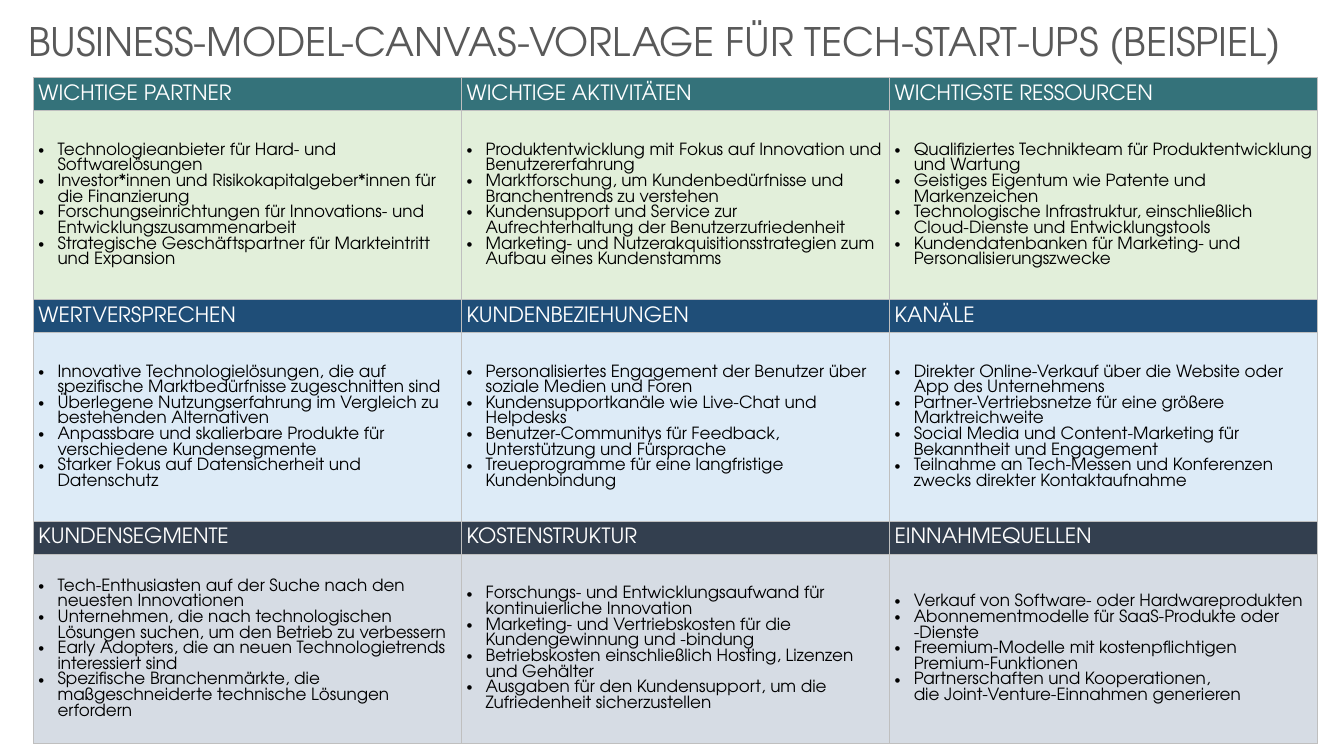
from pptx import Presentation
from pptx.dml.color import RGBColor
from pptx.enum.text import MSO_ANCHOR, MSO_AUTO_SIZE, PP_ALIGN
from pptx.oxml.ns import qn
from pptx.util import Cm, Pt
from lxml import etree

TOP, MIDDLE = MSO_ANCHOR.TOP, MSO_ANCHOR.MIDDLE
FIT_SHAPE = MSO_AUTO_SIZE.SHAPE_TO_FIT_TEXT
LEFT = PP_ALIGN.LEFT

FONT = "TeX Gyre Adventor"
COLORS = {
    "title": "595959", "white": "FFFFFF", "black": "000000", "border": "BFBFBF",
    "teal": "34727A", "green": "E2EFDA",
    "blue": "1F4E78", "sky": "DDEBF7",
    "slate": "333F4F", "gray": "D6DCE4",
}
TITLE = {"size": Pt(28), "color": "title"}
HEADING = {"size": Pt(15), "color": "white"}
BULLET = {"size": Pt(12), "color": "black"}

COLUMNS = 3
COLUMN_WIDTH = Cm(10.79)
HEADING_HEIGHT, BODY_HEIGHT = Cm(0.84), Cm(4.75)
BULLET_INDENT = Cm(0.48)
CELL_FORMAT = {
    "vertical_anchor": MIDDLE, "margin_left": Cm(0.13), "margin_top": Cm(0.02),
    "margin_right": Cm(0.02), "margin_bottom": 0,
}

# Each band: heading fill, body fill, then its sections
BANDS = [
    ("teal", "green", {
        "WICHTIGE PARTNER": [
            "Technologieanbieter für Hard- und Softwarelösungen",
            "Investor*innen und Risikokapitalgeber*innen für die Finanzierung",
            "Forschungseinrichtungen für Innovations- und Entwicklungszusammenarbeit",
            "Strategische Geschäftspartner für Markteintritt und Expansion"],
        "WICHTIGE AKTIVITÄTEN": [
            "Produktentwicklung mit Fokus auf Innovation und Benutzererfahrung",
            "Marktforschung, um Kundenbedürfnisse und Branchentrends zu verstehen",
            "Kundensupport und Service zur Aufrechterhaltung der Benutzerzufriedenheit",
            "Marketing- und Nutzerakquisitionsstrategien zum Aufbau eines Kundenstamms"],
        "WICHTIGSTE RESSOURCEN": [
            "Qualifiziertes Technikteam für Produktentwicklung und Wartung",
            "Geistiges Eigentum wie Patente und Markenzeichen",
            "Technologische Infrastruktur, einschließlich \vCloud-Dienste und Entwicklungstools",
            "Kundendatenbanken für Marketing- und Personalisierungszwecke"],
    }),
    ("blue", "sky", {
        "WERTVERSPRECHEN": [
            "Innovative Technologielösungen, die auf spezifische Marktbedürfnisse "
            "zugeschnitten sind",
            "Überlegene Nutzungserfahrung im Vergleich zu bestehenden Alternativen",
            "Anpassbare und skalierbare Produkte für verschiedene Kundensegmente",
            "Starker Fokus auf Datensicherheit und Datenschutz"],
        "KUNDENBEZIEHUNGEN": [
            "Personalisiertes Engagement der Benutzer über soziale Medien und Foren",
            "Kundensupportkanäle wie Live-Chat und Helpdesks",
            "Benutzer-Communitys für Feedback, Unterstützung und Fürsprache",
            "Treueprogramme für eine langfristige Kundenbindung"],
        "KANÄLE": [
            "Direkter Online-Verkauf über die Website oder App des Unternehmens",
            "Partner-Vertriebsnetze für eine größere Marktreichweite",
            "Social Media und Content-Marketing für Bekanntheit und Engagement",
            "Teilnahme an Tech-Messen und Konferenzen zwecks direkter Kontaktaufnahme"],
    }),
    ("slate", "gray", {
        "KUNDENSEGMENTE": [
            "Tech-Enthusiasten auf der Suche nach den neuesten Innovationen",
            "Unternehmen, die nach technologischen Lösungen suchen, um den Betrieb "
            "zu verbessern",
            "Early Adopters, die an neuen Technologietrends interessiert sind",
            "Spezifische Branchenmärkte, die maßgeschneiderte technische Lösungen erfordern"],
        "KOSTENSTRUKTUR": [
            "Forschungs- und Entwicklungsaufwand für kontinuierliche Innovation",
            "Marketing- und Vertriebskosten für die Kundengewinnung und -bindung",
            "Betriebskosten einschließlich Hosting, Lizenzen und Gehälter",
            "Ausgaben für den Kundensupport, um die Zufriedenheit sicherzustellen"],
        "EINNAHMEQUELLEN": [
            "Verkauf von Software- oder Hardwareprodukten",
            "Abonnementmodelle für SaaS-Produkte oder -Dienste",
            "Freemium-Modelle mit kostenpflichtigen Premium-Funktionen",
            "Partnerschaften und Kooperationen, \vdie Joint-Venture-Einnahmen generieren"],
    }),
]


def set_attrs(obj, values):
    for name, value in values.items():
        setattr(obj, name, value)


def rgb(name):
    return RGBColor.from_string(COLORS[name])


def write_text(p, text, style):
    p.text = text
    for r in p.runs:
        set_attrs(r.font, {"name": FONT, "size": style["size"], "bold": False})
        r.font.color.rgb = rgb(style["color"])
    # Line breaks take the size of their paragraph
    for br in p._p.findall(qn("a:br")):
        etree.SubElement(br, qn("a:rPr"), sz=str(int(style["size"].pt * 100)))


def add_bullet(p):
    pPr = p._p.get_or_add_pPr()
    pPr.set("marL", str(BULLET_INDENT))
    pPr.set("indent", str(-BULLET_INDENT))
    etree.SubElement(pPr, qn("a:buFont"), typeface="Arial")
    etree.SubElement(pPr, qn("a:buChar"), char="•")


def add_borders(cell):
    tcPr = cell._tc.get_or_add_tcPr()
    for side in ("lnL", "lnR", "lnT", "lnB"):
        ln = etree.SubElement(tcPr, qn("a:" + side), w=str(Pt(0.5)))
        fill = etree.SubElement(ln, qn("a:solidFill"))
        etree.SubElement(fill, qn("a:srgbClr"), val=COLORS["border"])


def fill_cell(cell, lines, style, fill, bulleted=False):
    set_attrs(cell, CELL_FORMAT)
    add_borders(cell)
    cell.fill.solid()
    cell.fill.fore_color.rgb = rgb(fill)
    tf = cell.text_frame
    for i, line in enumerate(lines):
        p = tf.add_paragraph() if i else tf.paragraphs[0]
        if bulleted:
            add_bullet(p)
        write_text(p, line, style)


def format_title(sp, text):
    set_attrs(sp, {"left": Cm(0.46), "top": Cm(0.3), "width": Cm(32.77), "height": Cm(1.45)})
    tf = sp.text_frame
    set_attrs(tf, {"vertical_anchor": TOP, "word_wrap": True, "auto_size": FIT_SHAPE})
    p = tf.paragraphs[0]
    set_attrs(p, {"alignment": LEFT, "line_spacing": 1.0})
    write_text(p, text, TITLE)


def add_canvas(s):
    band_height = HEADING_HEIGHT + BODY_HEIGHT
    table = s.shapes.add_table(
        2 * len(BANDS), COLUMNS, Cm(0.84), Cm(1.95),
        COLUMNS * COLUMN_WIDTH, len(BANDS) * band_height).table
    set_attrs(table, {"first_row": False, "horz_banding": False})
    for column in table.columns:
        column.width = COLUMN_WIDTH
    for band, (heading_fill, body_fill, sections) in enumerate(BANDS):
        row = 2 * band
        table.rows[row].height = HEADING_HEIGHT
        table.rows[row + 1].height = BODY_HEIGHT
        for col, (heading, bullets) in enumerate(sections.items()):
            fill_cell(table.cell(row, col), [heading], HEADING, heading_fill)
            fill_cell(table.cell(row + 1, col), bullets, BULLET, body_fill, bulleted=True)


def main():
    prs = Presentation()
    set_attrs(prs, {"slide_width": Cm(33.87), "slide_height": Cm(19.05)})
    s = prs.slides.add_slide(prs.slide_layouts[5])
    format_title(s.shapes.title, "BUSINESS-MODEL-CANVAS-VORLAGE FÜR TECH-START-UPS (BEISPIEL)")
    add_canvas(s)
    prs.save("out.pptx")


if __name__ == "__main__":
    main()
